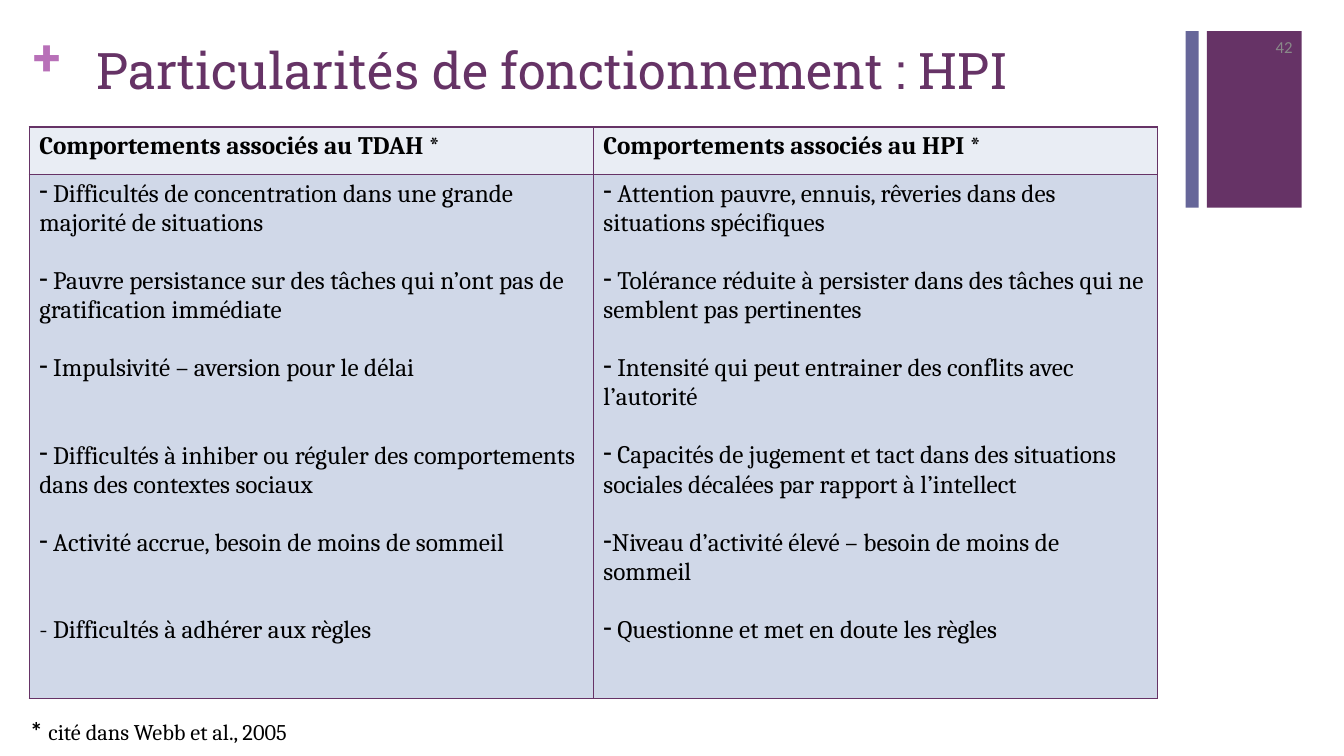
from dataclasses import dataclass

import pptx
import pptx.dml.color
import pptx.enum.shapes
import pptx.enum.text
import pptx.oxml
import pptx.oxml.ns
import pptx.util
from pptx.util import Inches

ANCHOR = pptx.enum.text.MSO_ANCHOR
ALIGN = pptx.enum.text.PP_ALIGN


@dataclass(frozen=True)
class Theme:
    purple: str = "663366"
    slate: str = "666699"
    orchid: str = "B870B8"
    gray: str = "898989"
    black: str = "000000"
    header_fill: str = "E9EDF4"
    body_fill: str = "D0D8E8"
    heading_font: str = "Roboto Slab"
    body_font: str = "Cambria"
    label_font: str = "Calibri"
    title_size: int = 36
    body_size: int = 18
    note_size: int = 16
    number_size: int = 12
    blank_line: float = 20.8


THEME = Theme()

HEADERS = ["Comportements associés au TDAH *", "Comportements associés au HPI *"]
ADHD_BEHAVIOURS = [
    (" Difficultés de concentration dans une grande majorité de situations", 1),
    (" Pauvre persistance sur des tâches qui n’ont pas de gratification immédiate", 1),
    (" Impulsivité – aversion pour le délai", 2),
    (" Difficultés à inhiber ou réguler des comportements dans des contextes sociaux", 1),
    (" Activité accrue, besoin de moins de sommeil", 2),
    ("- Difficultés à adhérer aux règles", 0),
]
GIFTED_BEHAVIOURS = [
    (" Attention pauvre, ennuis, rêveries dans des situations spécifiques", 1),
    (" Tolérance réduite à persister dans des tâches qui ne semblent pas pertinentes", 1),
    (" Intensité qui peut entrainer des conflits avec l’autorité", 1),
    (" Capacités de jugement et tact dans des situations sociales décalées par rapport à l’intellect", 1),
    ("Niveau d’activité élevé – besoin de moins de sommeil", 1),
    (" Questionne et met en doute les règles", 0),
]


def rgb(color):
    return pptx.dml.color.RGBColor.from_string(color)


def add_run(paragraph, text, size, font, color, bold=False):
    run = paragraph.add_run()
    run.text = text
    run.font.size = pptx.util.Pt(size)
    run.font.name = font
    run.font.color.rgb = rgb(color)
    run.font.bold = bold


def add_bar(slide, left, width, color):
    shape = slide.shapes.add_shape(
        pptx.enum.shapes.MSO_SHAPE.RECTANGLE,
        Inches(left), Inches(0.31), Inches(width), Inches(1.75))
    shape.shadow.inherit = False
    shape.fill.solid()
    shape.fill.fore_color.rgb = rgb(color)
    shape.line.fill.background()


def add_text(slide, box, runs, anchor=ANCHOR.TOP, align=ALIGN.LEFT, inset=True):
    shape = slide.shapes.add_textbox(*(Inches(length) for length in box))
    frame = shape.text_frame
    frame.word_wrap = True
    frame.vertical_anchor = anchor
    if not inset:
        frame.margin_left = frame.margin_right = 0
        frame.margin_top = frame.margin_bottom = 0
    paragraph = frame.paragraphs[0]
    paragraph.alignment = align
    for run in runs:
        add_run(paragraph, *run)


def add_dash(paragraph):
    properties = paragraph._p.get_or_add_pPr()
    properties.set("marL", "0")
    properties.set("indent", "0")
    bullet = pptx.oxml.parse_xml(
        f'<a:buChar {pptx.oxml.ns.nsdecls("a")} char="-"/>')
    properties.append(bullet)


def style_cell(cell, fill):
    properties = cell._tc.get_or_add_tcPr()
    for side in ("lnL", "lnR", "lnT", "lnB"):
        properties.append(pptx.oxml.parse_xml(
            f'<a:{side} {pptx.oxml.ns.nsdecls("a")} w="12700"><a:solidFill>'
            f'<a:srgbClr val="{THEME.purple}"/></a:solidFill></a:{side}>'))
    cell.fill.solid()
    cell.fill.fore_color.rgb = rgb(fill)


def fill_behaviours(cell, behaviours):
    frame = cell.text_frame
    for index, (text, blank_lines) in enumerate(behaviours):
        paragraph = frame.add_paragraph() if index else frame.paragraphs[0]
        paragraph.space_after = pptx.util.Pt(blank_lines * THEME.blank_line)
        if not text.startswith("-"):
            add_dash(paragraph)
        add_run(paragraph, text, THEME.body_size, THEME.body_font, THEME.black)


def add_comparison(slide):
    table = slide.shapes.add_table(
        2, 2, Inches(0.29), Inches(1.26), Inches(11.19), Inches(5.67)).table
    table.rows[0].height = Inches(0.47)
    table.rows[1].height = Inches(5.2)
    for column, behaviours in enumerate((ADHD_BEHAVIOURS, GIFTED_BEHAVIOURS)):
        header, body = table.cell(0, column), table.cell(1, column)
        style_cell(header, THEME.header_fill)
        style_cell(body, THEME.body_fill)
        add_run(header.text_frame.paragraphs[0], HEADERS[column],
                THEME.body_size, THEME.body_font, THEME.black, True)
        fill_behaviours(body, behaviours)


def main():
    presentation = pptx.Presentation()
    presentation.slide_width = Inches(13.33)
    presentation.slide_height = Inches(7.5)
    slide = presentation.slides.add_slide(presentation.slide_layouts[6])

    add_bar(slide, 11.97, 0.94, THEME.purple)
    add_text(slide, (0.33, 0.25, 0.38, 0.61),
             [("+", THEME.title_size, THEME.heading_font, THEME.orchid, True)],
             inset=False)
    add_bar(slide, 11.76, 0.13, THEME.slate)
    add_text(slide, (12.11, 0.26, 0.81, 0.4),
             [("42", THEME.number_size, THEME.label_font, THEME.gray)],
             anchor=ANCHOR.MIDDLE, align=ALIGN.RIGHT)
    add_comparison(slide)
    add_text(slide, (0.86, 0.34, 10.41, 0.96),
             [("Particularités de fonctionnement : HPI",
               THEME.title_size, THEME.heading_font, THEME.purple)])
    add_text(slide, (0.2, 7.05, 3.69, 0.4),
             [("* ", THEME.body_size, THEME.label_font, THEME.black, True),
              ("cité dans Webb et al., 2005",
               THEME.note_size, THEME.body_font, THEME.black)])

    presentation.save("out.pptx")


if __name__ == "__main__":
    main()
